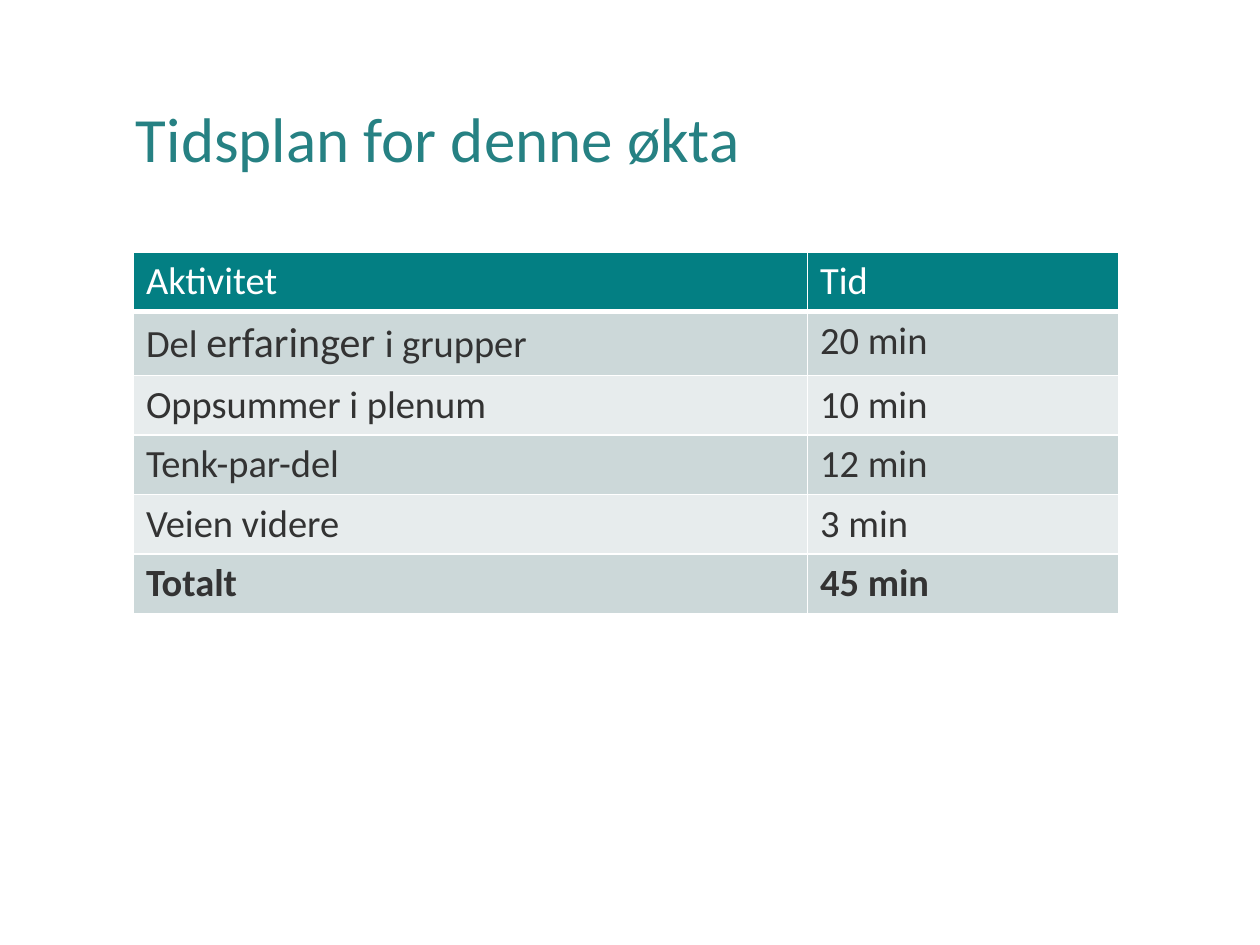
from pptx import Presentation
from pptx import util as u
from pptx.dml.color import RGBColor
from pptx.enum import text
from pptx.oxml import parse_xml
from pptx.oxml.ns import nsdecls

SCHEDULE = [
    ("Aktivitet", "Tid"),
    ("Del erfaringer i grupper", "20 min"),
    ("Oppsummer i plenum", "10 min"),
    ("Tenk-par-del", "12 min"),
    ("Veien videre", "3 min"),
    ("Totalt", "45 min"),
]


def colour(value):
    return RGBColor.from_string(value)


class SlideBuilder:
    font = "Calibri"
    title_colour, header_fill = "268183", "037F83"
    bands = ("E7ECED", "CCD8D9")
    white, ink = "FFFFFF", "333333"

    def __init__(self, slide):
        self.slide = slide

    def format_run(self, run, size, value, bold=False):
        run.font.name = self.font
        run.font.size = u.Pt(size)
        run.font.bold = bold
        run.font.color.rgb = colour(value)

    def title(self, wording, left, top, width, height):
        heading = self.slide.shapes.title
        heading.left, heading.top = u.Cm(left), u.Cm(top)
        heading.width, heading.height = u.Cm(width), u.Cm(height)
        frame = heading.text_frame
        frame.text = wording
        frame.auto_size = text.MSO_AUTO_SIZE.NONE
        frame.vertical_anchor = text.MSO_ANCHOR.MIDDLE
        frame.margin_left = frame.margin_right = u.Cm(0.25)
        frame.margin_top = frame.margin_bottom = u.Cm(0.25)
        line = frame.paragraphs[0]
        line.alignment = text.PP_ALIGN.LEFT
        line.line_spacing = 0.9
        self.format_run(line.runs[0], 36, self.title_colour)

    def borders(self, cell, bottom):
        properties = cell._tc.get_or_add_tcPr()
        for side, points in (("L", 1), ("R", 1), ("T", 1), ("B", bottom)):
            properties.append(parse_xml(
                f'<a:ln{side} {nsdecls("a")} w="{u.Pt(points)}"><a:solidFill>'
                f'<a:srgbClr val="{self.white}"/></a:solidFill></a:ln{side}>'))

    def table(self, rows, left, top, column_widths, row_height):
        frame = self.slide.shapes.add_table(
            len(rows), len(column_widths), u.Cm(left), u.Cm(top),
            u.Cm(sum(column_widths)), u.Cm(row_height * len(rows)))
        grid = frame.table
        for column, width in zip(grid.columns, column_widths):
            column.width = u.Cm(width)
        for r, row in enumerate(rows):
            header, total = r == 0, r == len(rows) - 1
            for c, wording in enumerate(row):
                cell = grid.cell(r, c)
                self.borders(cell, 3 if header else 1)
                cell.fill.solid()
                cell.fill.fore_color.rgb = colour(
                    self.header_fill if header else self.bands[r % 2])
                cell.text_frame.text = wording
                self.format_run(cell.text_frame.paragraphs[0].runs[0], 22,
                                self.white if header else self.ink, total)
        return grid

    def enlarge_word(self, cell, word, size):
        """Split the cell's text around word and give that word its own size."""
        line = cell.text_frame.paragraphs[0]
        before, after = line.text.split(word)
        line.runs[0].text = before
        for part, points in ((word, size), (after, 22)):
            run = line.add_run()
            run.text = part
            self.format_run(run, points, self.ink)


def main():
    deck = Presentation()
    deck.slide_width, deck.slide_height = u.Cm(25.4), u.Cm(19.05)
    builder = SlideBuilder(deck.slides.add_slide(deck.slide_layouts[5]))
    builder.title("Tidsplan for denne økta", 2.49, 1.02, 21.06, 3.68)
    plan = builder.table(SCHEDULE, 2.69, 5.08, (13.59, 6.27), 1.04)
    builder.enlarge_word(plan.cell(1, 0), "erfaringer ", 24)
    deck.save("out.pptx")


if __name__ == "__main__":
    main()
